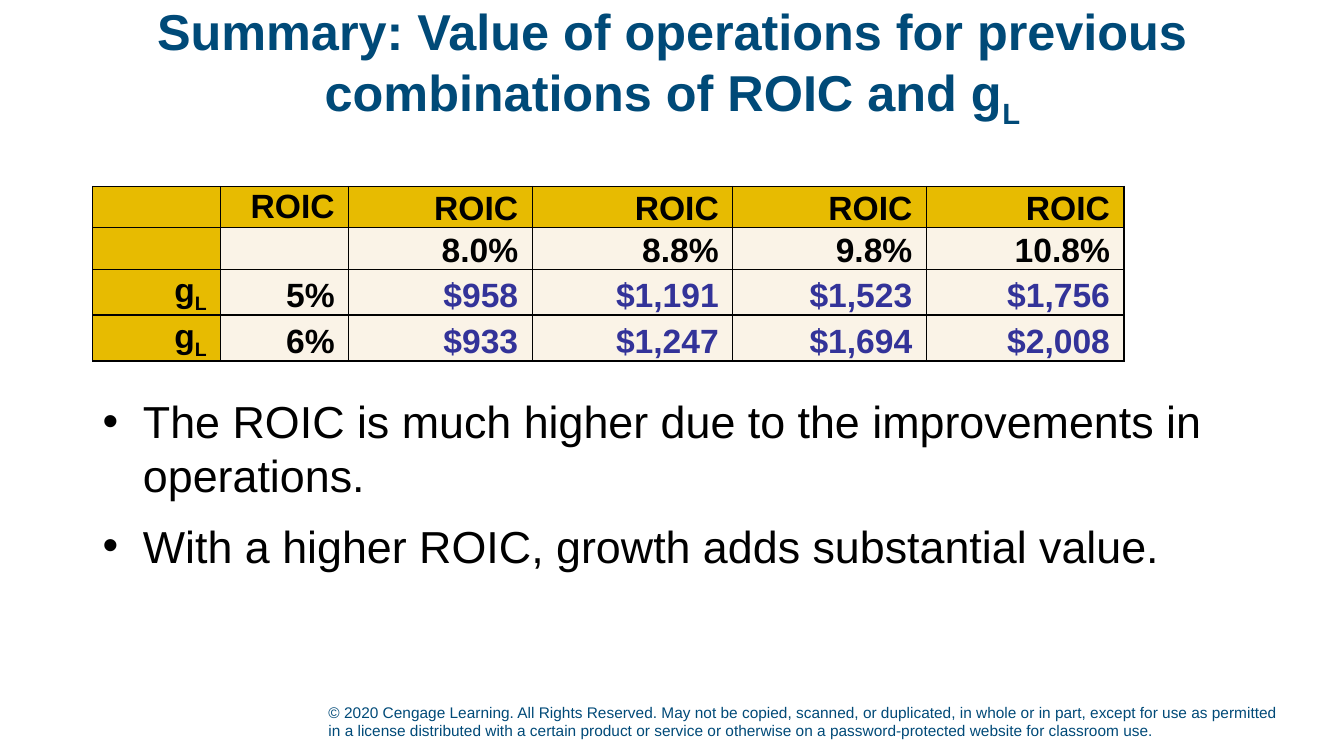
from lxml.etree import SubElement
from pptx import Presentation
from pptx.dml.color import RGBColor
from pptx.enum.text import MSO_ANCHOR, PP_ALIGN
from pptx.oxml.ns import qn
from pptx.util import Inches, Pt

COLORS = {
    "navy": "004A78",
    "gold": "E7BB01",
    "cream": "FAF3E7",
    "black": "000000",
    "indigo": "333399",
}
FONT = "Arial"
SUBSCRIPT_MARK = "_"

TITLE = "Summary: Value of operations for previous combinations of ROIC and g_L"
VALUES = [
    ["", "ROIC", "ROIC", "ROIC", "ROIC", "ROIC"],
    ["", "", "8.0%", "8.8%", "9.8%", "10.8%"],
    ["g_L", "5%", "$958", "$1,191", "$1,523", "$1,756"],
    ["g_L", "6%", "$933", "$1,247", "$1,694", "$2,008"],
]
COLUMN_WIDTHS = [1.27, 1.27, 1.82, 1.99, 1.92, 1.96]
ROW_HEIGHT = 0.41
FINDINGS = [
    "The ROIC is much higher due to the improvements in operations.",
    "With a higher ROIC, growth adds substantial value.",
]
COPYRIGHT = (
    "© 2020 Cengage Learning. All Rights Reserved. May not be copied, scanned, "
    "or duplicated, in whole or in part, except for use as permitted in a license "
    "distributed with a certain product or service or otherwise on a "
    "password-protected website for classroom use."
)


def rgb(name):
    return RGBColor.from_string(COLORS[name])


def write(paragraph, text, size, color, bold=False):
    """Fill a paragraph; whatever follows the mark is set as a subscript."""
    base, _, subscript = text.partition(SUBSCRIPT_MARK)
    paragraph.text = base
    if subscript:
        run = paragraph.add_run()
        run.text = subscript
        run.font._element.set("baseline", "-25000")
    for run in paragraph.runs:
        run.font.name = FONT
        run.font.size = Pt(size)
        run.font.bold = bold
        run.font.color.rgb = rgb(color)


def add_text_frame(slide, box, anchor):
    frame = slide.shapes.add_textbox(*map(Inches, box)).text_frame
    frame.word_wrap = True
    frame.vertical_anchor = anchor
    return frame


def add_title(slide, box):
    heading = add_text_frame(slide, box, MSO_ANCHOR.MIDDLE).paragraphs[0]
    heading.alignment = PP_ALIGN.CENTER
    heading.line_spacing = 0.95
    write(heading, TITLE, 36, "navy", bold=True)


def add_borders(cell):
    properties = cell._tc.get_or_add_tcPr()
    for position, side in enumerate(("a:lnL", "a:lnR", "a:lnT", "a:lnB")):
        line = properties.makeelement(qn(side), {"w": str(Pt(1))})
        fill = SubElement(line, qn("a:solidFill"))
        SubElement(fill, qn("a:srgbClr"), val=COLORS["black"])
        properties.insert(position, line)


def add_value_table(slide, box):
    frame = slide.shapes.add_table(len(VALUES), len(COLUMN_WIDTHS), *map(Inches, box))
    table = frame.table
    for column, width in zip(table.columns, COLUMN_WIDTHS):
        column.width = Inches(width)
    for r, row in enumerate(VALUES):
        table.rows[r].height = Inches(ROW_HEIGHT)
        for c, value in enumerate(row):
            cell = table.cell(r, c)
            cell.margin_left = cell.margin_right = Inches(0.14)
            cell.margin_top = cell.margin_bottom = 0
            first_roic = (r, c) == (0, 1)
            cell.vertical_anchor = MSO_ANCHOR.MIDDLE if first_roic else MSO_ANCHOR.BOTTOM
            # Header row and first column are gold
            cell.fill.solid()
            cell.fill.fore_color.rgb = rgb("gold" if r == 0 or c == 0 else "cream")
            add_borders(cell)
            if value:
                paragraph = cell.text_frame.paragraphs[0]
                paragraph.alignment = PP_ALIGN.RIGHT
                color = "indigo" if value.startswith("$") else "black"
                write(paragraph, value, 24, color, bold=True)


def add_findings(slide, box):
    frame = add_text_frame(slide, box, MSO_ANCHOR.TOP)
    for i, finding in enumerate(FINDINGS):
        paragraph = frame.add_paragraph() if i else frame.paragraphs[0]
        properties = paragraph._p.get_or_add_pPr()
        properties.set("marL", str(Inches(0.4)))
        properties.set("indent", str(-Inches(0.4)))
        SubElement(properties, qn("a:buFont"), typeface=FONT)
        SubElement(properties, qn("a:buChar"), char="•")
        paragraph.space_before = Pt(6 if i else 0)
        paragraph.space_after = Pt(6)
        write(paragraph, finding, 32, "black")


def add_copyright(slide, box):
    frame = add_text_frame(slide, box, MSO_ANCHOR.BOTTOM)
    write(frame.paragraphs[0], COPYRIGHT, 11, "navy")


def main():
    deck = Presentation()
    deck.slide_width, deck.slide_height = Inches(13.33), Inches(7.5)
    slide = deck.slides.add_slide(deck.slide_layouts[6])
    left, width = 0.92, 11.5
    add_copyright(slide, (3.16, 6.89, 9.63, 0.5))
    add_title(slide, (left, 0.15, width, 1))
    add_value_table(slide, (left, 1.85, sum(COLUMN_WIDTHS), ROW_HEIGHT * len(VALUES)))
    add_findings(slide, (left, 3.86, width, 2.12))
    deck.save("out.pptx")


if __name__ == "__main__":
    main()
